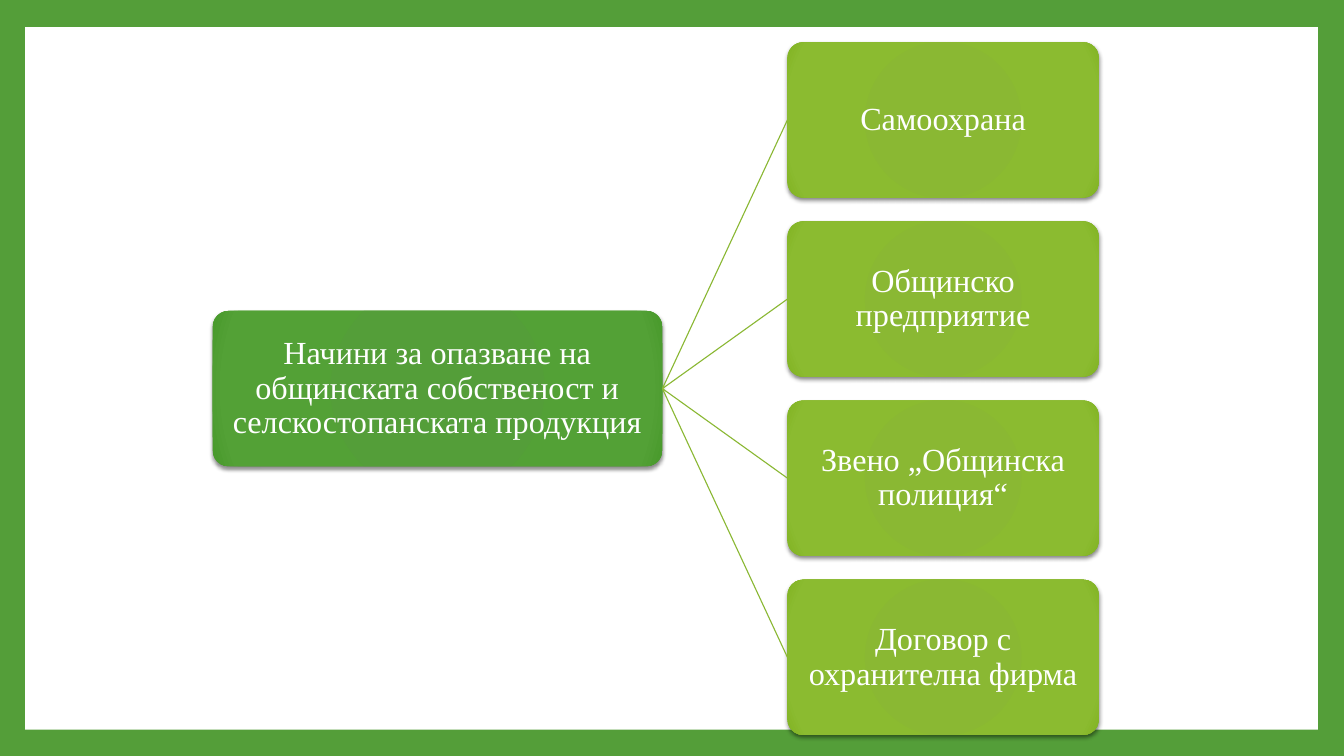
from lxml import etree
from pptx import Presentation
from pptx.dml.color import RGBColor
from pptx.enum.shapes import MSO_CONNECTOR, MSO_SHAPE
from pptx.enum.text import MSO_ANCHOR, PP_ALIGN
from pptx.oxml import parse_xml
from pptx.oxml.ns import qn
from pptx.util import Inches, Pt

RECT, ROUND_RECT = MSO_SHAPE.RECTANGLE, MSO_SHAPE.ROUNDED_RECTANGLE
STRAIGHT = MSO_CONNECTOR.STRAIGHT
CENTER, MIDDLE = PP_ALIGN.CENTER, MSO_ANCHOR.MIDDLE
NS = 'xmlns:a="http://schemas.openxmlformats.org/drawingml/2006/main"'
RIGHT_SIDE, LEFT_SIDE = 3, 1

GREEN, LIME, WHITE = "549E39", "8AB833", "FFFFFF"
GREEN_STOPS = ((0, GREEN), (90, "53A136"), (100, "48992B"))
LIME_STOPS = ((0, LIME), (90, "8BBB30"), (100, "81B322"))

BOX_H, ROW_STEP, TOP = 1.54, 1.777, 0.42
ROOT_X, ROOT_W = 2.11, 4.46
WAY_X, WAY_W = 7.81, 3.09

ROOT_TEXT = "Начини за опазване на общинската собственост и селскостопанската продукция"
WAYS = ("Самоохрана", "Общинско предприятие",
        "Звено „Общинска полиция“", "Договор с охранителна фирма")


def rgb(value):
    return RGBColor.from_string(value)


def add_radial_fill(sp, stops):
    gs = "".join(f'<a:gs pos="{pos * 1000}"><a:srgbClr val="{color}"/></a:gs>'
                 for pos, color in stops)
    grad = parse_xml(
        f'<a:gradFill {NS} rotWithShape="1"><a:gsLst>{gs}</a:gsLst>'
        '<a:path path="circle"><a:fillToRect l="100000" t="100000" '
        'r="100000" b="100000"/></a:path></a:gradFill>')
    sp.element.spPr.find(qn("a:ln")).addprevious(grad)


def add_soft_shadow(sp):
    sp.shadow.inherit = False
    effects = sp.element.spPr.find(qn("a:effectLst"))
    effects.append(parse_xml(
        f'<a:outerShdw {NS} blurRad="{Pt(3)}" dist="{Pt(2)}" dir="5400000" '
        'rotWithShape="0"><a:srgbClr val="000000"><a:alpha val="45000"/>'
        '</a:srgbClr></a:outerShdw>'))


def add_box(slide, text, x, row, width, stops):
    """Add a labelled rounded box; row counts box steps from the top."""
    sp = slide.shapes.add_shape(ROUND_RECT, Inches(x), Inches(TOP + row * ROW_STEP),
                                Inches(width), Inches(BOX_H))
    sp.adjustments[0] = 0.1
    sp.line.fill.background()
    add_radial_fill(sp, stops)
    add_soft_shadow(sp)
    tf = sp.text_frame
    tf.word_wrap = True
    tf.vertical_anchor = MIDDLE
    tf.margin_left = tf.margin_right = tf.margin_top = tf.margin_bottom = Inches(0.06)
    p = tf.paragraphs[0]
    p.alignment = CENTER
    p.line_spacing = 0.9
    r = p.add_run()
    r.text = text
    r.font.size = Pt(23)
    r.font.name = "Times New Roman"
    r.font.color.rgb = rgb(WHITE)
    return sp


def add_branch(slide, root, way):
    line = slide.shapes.add_connector(STRAIGHT, 0, 0, 0, 0)
    line.begin_connect(root, RIGHT_SIDE)
    line.end_connect(way, LEFT_SIDE)
    line.line.color.rgb = rgb(LIME)
    line.line.width = Pt(0.79)
    etree.SubElement(line.element.spPr, qn("a:effectLst"))


def add_frame(slide):
    """Leave a green border around a white panel."""
    fill = slide.background.fill
    fill.solid()
    fill.fore_color.rgb = rgb(GREEN)
    panel = slide.shapes.add_shape(RECT, Inches(0.25), Inches(0.27),
                                   Inches(12.82), Inches(6.97))
    panel.fill.solid()
    panel.fill.fore_color.rgb = rgb(WHITE)
    panel.line.fill.background()
    panel.shadow.inherit = False


def main():
    prs = Presentation()
    prs.slide_width, prs.slide_height = Inches(13.33), Inches(7.5)
    slide = prs.slides.add_slide(prs.slide_layouts[6])
    add_frame(slide)
    middle_row = (len(WAYS) - 1) / 2
    root = add_box(slide, ROOT_TEXT, ROOT_X, middle_row, ROOT_W, GREEN_STOPS)
    for row, text in enumerate(WAYS):
        way = add_box(slide, text, WAY_X, row, WAY_W, LIME_STOPS)
        add_branch(slide, root, way)
    prs.save("out.pptx")


if __name__ == "__main__":
    main()
